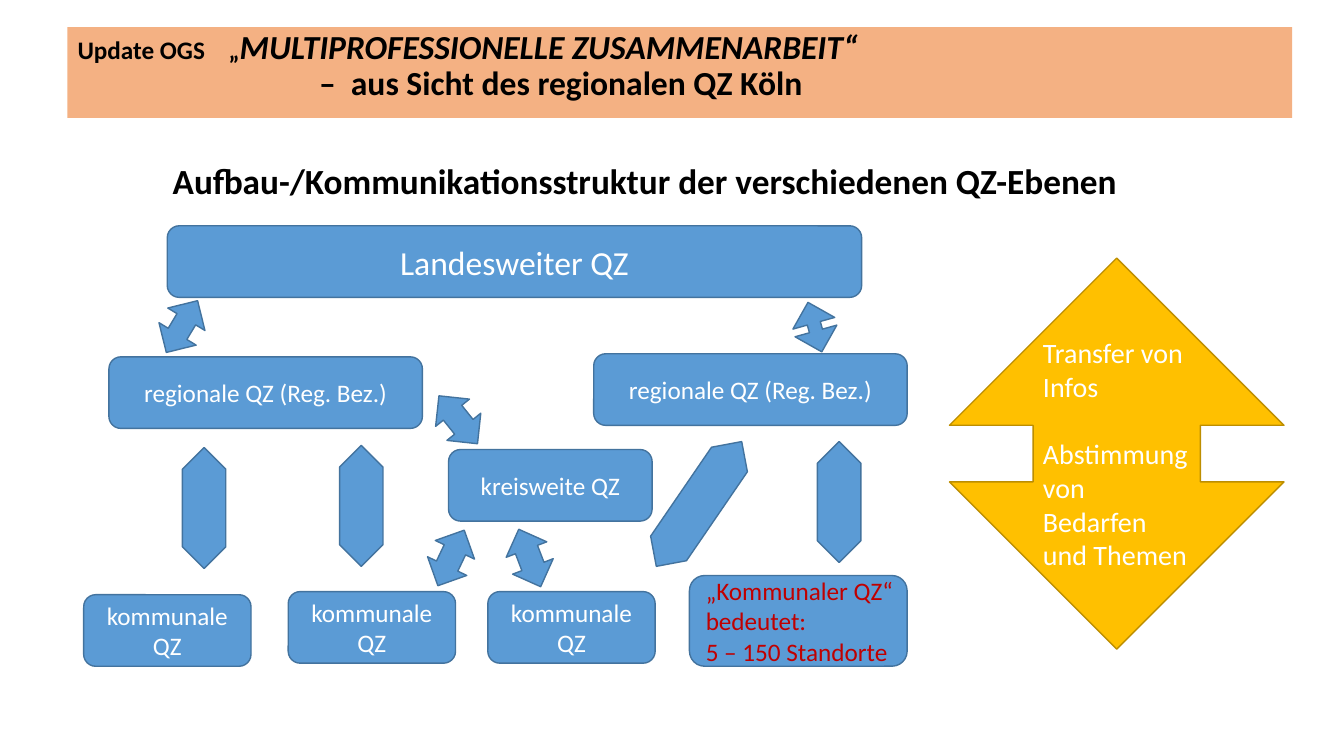
import pptx
import pptx.dml.color
import pptx.enum.shapes
import pptx.enum.text
import pptx.util

Pt = pptx.util.Pt
SHAPE = pptx.enum.shapes.MSO_SHAPE
ALIGN = pptx.enum.text.PP_ALIGN
ANCHOR = pptx.enum.text.MSO_ANCHOR

BLUE, BLUE_LINE = "5B9BD5", "43739E"
GOLD, GOLD_LINE = "FFC000", "BD8E00"
PEACH, RED, WHITE, BLACK = "F4B183", "C00000", "FFFFFF", "000000"
BOX_H = 51.1
ARROW_W = 31
SLIM = (0, 1.094)
SHORT = (0, 0.543)

# text, left, top, width, size
QZ_BOXES = [
    ("Landesweiter QZ", 119.5, 161.3, 496, 24),
    ("regionale QZ (Reg. Bez.)", 77.8, 254.9, 223.9, 18),
    ("regionale QZ (Reg. Bez.)", 424.1, 252.7, 223.9, 18),
    ("kreisweite QZ", 320.4, 321.1, 145.4, 18),
    ("kommunale QZ", 59.8, 424.8, 119.5, 18),
    ("kommunale QZ", 205.9, 422.6, 119.5, 18),
    ("kommunale QZ", 348.5, 422.6, 119.5, 18),
]

# left, top, height, rotation, adjustments
LINK_ARROWS = [
    (114.5, 211.7, 43.2, 31.1, ()),
    (566.6, 215.3, 36.7, 344.4, (0.514, 0.31)),
    (311.8, 277.9, 43.9, 321.2, SHORT),
    (306.7, 376.6, 43.9, 25.4, SHORT),
    (362.9, 376.6, 43.9, 339.1, SHORT),
    (130.3, 319.7, 86.4, 0, SLIM),
    (242.6, 318.2, 86.4, 0, SLIM),
    (583.9, 315.4, 86.4, 0, SLIM),
    (483.8, 306, 108, 34.4, SLIM),
]


def rgb(color):
    return pptx.dml.color.RGBColor.from_string(color)


def set_attrs(obj, attrs):
    for name, value in attrs.items():
        setattr(obj, name, value)


def add_run(p, text, size, color, **fmt):
    r = p.add_run()
    r.text = text
    set_attrs(r.font, {"name": "Calibri", "size": Pt(size), **fmt})
    r.font.color.rgb = rgb(color)


def write(tf, lines, size, color, align=ALIGN.CENTER, gap=0, **fmt):
    """Write one paragraph per line, with gap points between them."""
    set_attrs(tf, {"word_wrap": True, "vertical_anchor": ANCHOR.MIDDLE})
    for i, line in enumerate(lines):
        p = tf.add_paragraph() if i else tf.paragraphs[0]
        set_attrs(p, {"alignment": align, "space_before": Pt(gap if i else 0)})
        add_run(p, line, size, color, **fmt)


def add_shape(s, kind, left, top, width, height, fill=BLUE, line=BLUE_LINE):
    sp = s.shapes.add_shape(kind, Pt(left), Pt(top), Pt(width), Pt(height))
    sp.shadow.inherit = False
    sp.fill.solid()
    sp.fill.fore_color.rgb = rgb(fill)
    sp.line.color.rgb = rgb(line)
    sp.line.width = Pt(1)
    return sp


def add_link_arrow(s, left, top, height, rotation, adjustments):
    sp = add_shape(s, SHAPE.UP_DOWN_ARROW, left, top, ARROW_W, height)
    sp.rotation = rotation
    for i, value in enumerate(adjustments):
        sp.adjustments[i] = value


def fill_title(s):
    sp = s.shapes.title
    set_attrs(sp, {"left": Pt(48.2), "top": Pt(19.4),
                   "width": Pt(874.8), "height": Pt(64.8)})
    sp.fill.solid()
    sp.fill.fore_color.rgb = rgb(PEACH)
    tf = sp.text_frame
    set_attrs(tf, {"word_wrap": True, "vertical_anchor": ANCHOR.TOP,
                   "auto_size": pptx.enum.text.MSO_AUTO_SIZE.NONE,
                   "margin_left": Pt(7.2), "margin_top": Pt(2),
                   "margin_bottom": Pt(0)})
    p, subline = tf.paragraphs[0], tf.add_paragraph()
    for para in (p, subline):
        set_attrs(para, {"alignment": ALIGN.LEFT, "line_spacing": 0.9})
    add_run(p, "Update OGS\t„", 18, BLACK, bold=True)
    add_run(p, "MULTIPROFESSIONELLE ZUSAMMENARBEIT“", 24, BLACK,
            bold=True, italic=True)
    subline._p.get_or_add_pPr().set("marL", str(Pt(172.5)))
    add_run(subline, "–  aus Sicht des regionalen QZ Köln", 24, BLACK, bold=True)


def add_heading(s):
    sp = s.shapes.add_textbox(Pt(108), Pt(92.9), Pt(705.6), Pt(53.3))
    tf = sp.text_frame
    set_attrs(tf, {"margin_top": Pt(18), "margin_bottom": Pt(0)})
    write(tf, ["Aufbau-/Kommunikationsstruktur der verschiedenen QZ-Ebenen"],
          25.2, BLACK, bold=True)


def main():
    prs = pptx.Presentation()
    set_attrs(prs, {"slide_width": Pt(960), "slide_height": Pt(540)})
    s = prs.slides.add_slide(prs.slide_layouts[5])
    fill_title(s)
    add_heading(s)

    for text, left, top, width, size in QZ_BOXES:
        sp = add_shape(s, SHAPE.ROUNDED_RECTANGLE, left, top, width, BOX_H)
        write(sp.text_frame, [text], size, WHITE)

    sp = add_shape(s, SHAPE.ROUNDED_RECTANGLE, 492.5, 411.1, 155.5, 64.8)
    set_attrs(sp.text_frame, {"margin_left": Pt(8.5), "margin_right": Pt(0)})
    write(sp.text_frame, ["„Kommunaler QZ“", "bedeutet:", "5 – 150 Standorte"],
          18, RED, ALIGN.LEFT)

    for arrow in LINK_ARROWS:
        add_link_arrow(s, *arrow)

    sp = add_shape(s, SHAPE.UP_DOWN_ARROW, 678.2, 184.3, 239, 279.4,
                   GOLD, GOLD_LINE)
    write(sp.text_frame,
          ["Transfer von Infos", "Abstimmung von Bedarfen und Themen"],
          20, WHITE, ALIGN.LEFT, gap=24)

    prs.save("out.pptx")


if __name__ == "__main__":
    main()
